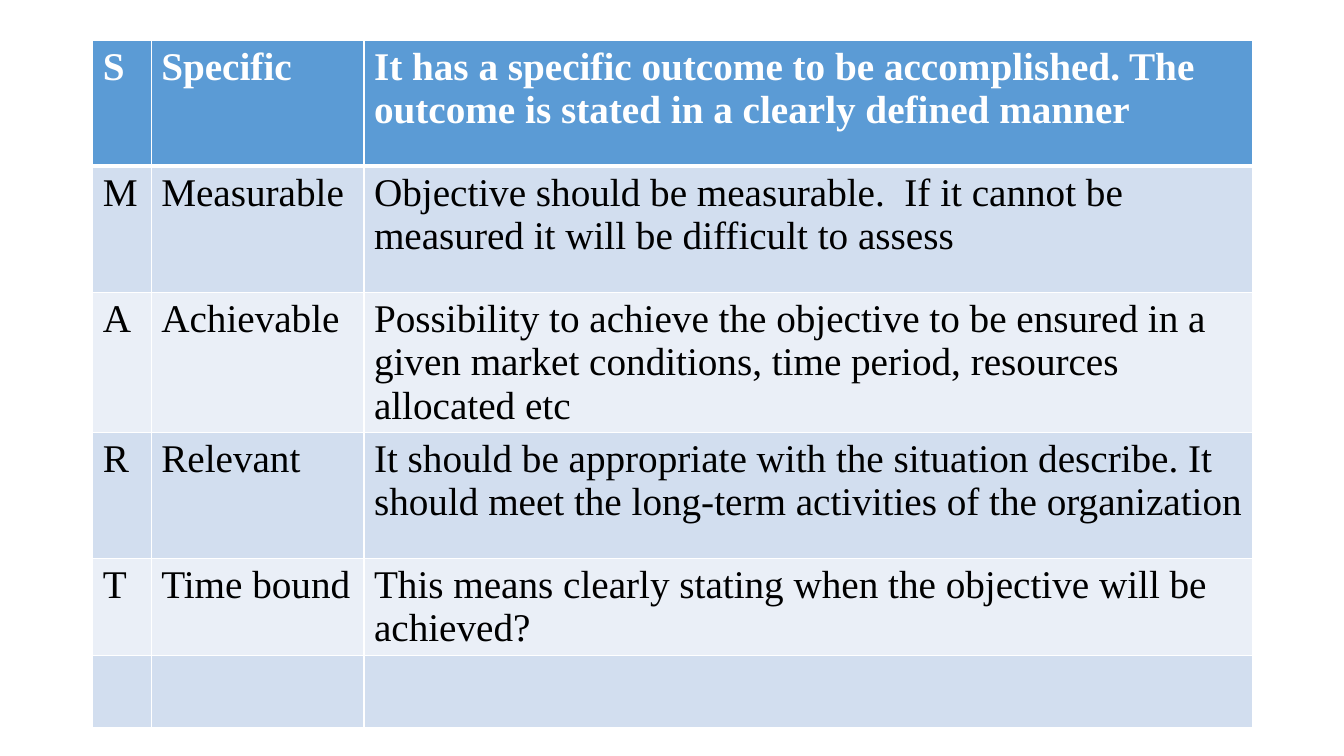
from lxml.etree import SubElement
from pptx import Presentation
from pptx.dml.color import RGBColor
from pptx.oxml.ns import qn
from pptx.util import Inches, Pt

WHITE, BLACK = "FFFFFF", "000000"
HEADER_FILL, DARK_BAND, LIGHT_BAND = "5B9BD5", "D2DEEF", "EAEFF7"
COLUMN_WIDTHS = [0.58, 2.11, 8.81]
ROW_HEIGHTS = [1.25, 1.25, 1.25, 1.25, 0.72, 0.72]
SMART_ROWS = [
    ("S", "Specific", "It has a specific outcome to be accomplished. "
     "The outcome is stated in a clearly defined manner"),
    ("M", "Measurable", "Objective should be measurable.  "
     "If it cannot be measured it will be difficult to assess"),
    ("A", "Achievable", "Possibility to achieve the objective to be ensured in a "
     "given market conditions, time period, resources allocated etc"),
    ("R", "Relevant", "It should be appropriate with the situation describe. "
     "It should meet the long-term activities of the organization"),
    ("T", "Time bound", "This means clearly stating when the objective will be achieved?"),
    ("", "", ""),
]


def write_text(cell, text, color=BLACK, bold=False, size=28):
    run = cell.text_frame.paragraphs[0].add_run()
    run.text = text
    run.font.name = "Times New Roman"
    run.font.size = Pt(size)
    run.font.bold = bold
    run.font.color.rgb = RGBColor.from_string(color)


def add_borders(cell, **widths):
    """Draw white borders; keys are L, R, T, B in that order, widths in points."""
    properties = cell._tc.get_or_add_tcPr()
    for side, width in widths.items():
        line = SubElement(properties, qn(f"a:ln{side}"), w=str(Pt(width)))
        fill = SubElement(line, qn("a:solidFill"))
        SubElement(fill, qn("a:srgbClr"), val=WHITE)


presentation = Presentation()
presentation.slide_width = Inches(13.33)
presentation.slide_height = Inches(7.5)
slide = presentation.slides.add_slide(presentation.slide_layouts[6])

table = slide.shapes.add_table(
    len(SMART_ROWS), len(COLUMN_WIDTHS), Inches(0.92), Inches(0.4),
    Inches(sum(COLUMN_WIDTHS)), Inches(sum(ROW_HEIGHTS))).table
for column, width in zip(table.columns, COLUMN_WIDTHS):
    column.width = Inches(width)

for row_index, (texts, height) in enumerate(zip(SMART_ROWS, ROW_HEIGHTS)):
    table.rows[row_index].height = Inches(height)
    is_header = row_index == 0
    band = DARK_BAND if row_index % 2 else LIGHT_BAND
    for column_index, text in enumerate(texts):
        cell = table.cell(row_index, column_index)
        add_borders(cell, L=1, R=1, T=3 if row_index == 1 else 1, B=3 if is_header else 1)
        cell.fill.solid()
        cell.fill.fore_color.rgb = RGBColor.from_string(HEADER_FILL if is_header else band)
        if text:
            write_text(cell, text, color=WHITE if is_header else BLACK, bold=is_header)

presentation.save("out.pptx")
